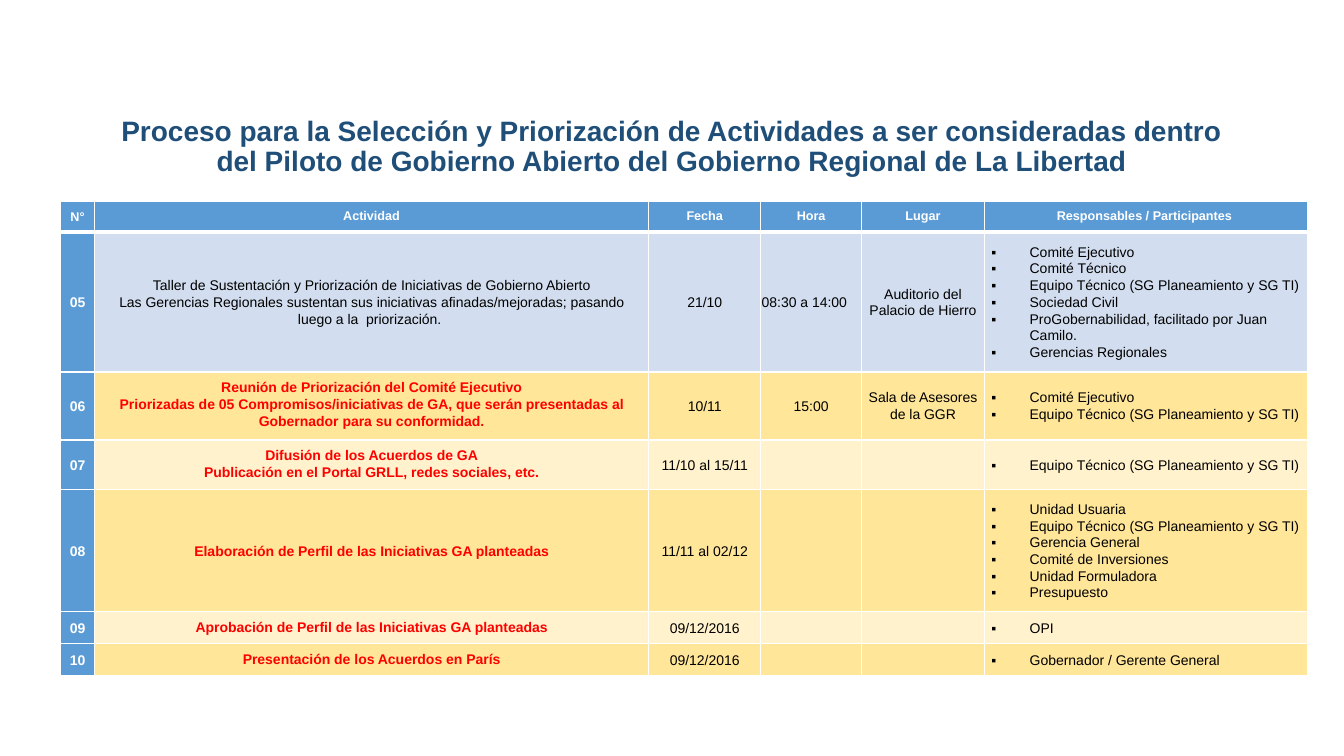
import dataclasses

import lxml.etree
import pptx
import pptx.dml.color
import pptx.enum.text
import pptx.oxml.ns
import pptx.util

Pt = pptx.util.Pt
RGBColor = pptx.dml.color.RGBColor
Align = pptx.enum.text.PP_ALIGN
Anchor = pptx.enum.text.MSO_ANCHOR
qn = pptx.oxml.ns.qn

NAVY = RGBColor(0x1F, 0x4E, 0x79)
BLUE = RGBColor(0x5B, 0x9B, 0xD5)
PALE_BLUE = RGBColor(0xD2, 0xDE, 0xEF)
GOLD = RGBColor(0xFF, 0xE6, 0x99)
CREAM = RGBColor(0xFF, 0xF2, 0xCC)
RED = RGBColor(0xFF, 0x00, 0x00)
BLACK = RGBColor(0x00, 0x00, 0x00)
WHITE = RGBColor(0xFF, 0xFF, 0xFF)

TITLE = ("Proceso para la Selección y Priorización de Actividades a ser consideradas dentro "
         "del Piloto de Gobierno Abierto del Gobierno Regional de La Libertad")
TECHNICAL_TEAM = "Equipo Técnico (SG Planeamiento y SG TI)"
BULLET_INDENT = Pt(27.36)


@dataclasses.dataclass(frozen=True)
class Column:
    heading: str
    width: float
    margin: float = 5


@dataclasses.dataclass(frozen=True)
class Activity:
    number: str
    lines: tuple[str, ...]
    date: str
    participants: tuple[str, ...]
    height: float
    fill: RGBColor
    time: str = ""
    place: str = ""
    highlighted: bool = True
    anchor: Anchor = Anchor.TOP
    time_align: Align = Align.CENTER


COLUMNS = (
    Column("N°", 24),
    Column("Actividad", 396),
    Column("Fecha", 80),
    Column("Hora", 72, margin=0.7),
    Column("Lugar", 87.8, margin=0.7),
    Column("Responsables / Participantes ", 231),
)
HEADER_HEIGHT = 21.8

ACTIVITIES = (
    Activity(
        "05",
        ("Taller de Sustentación y Priorización de Iniciativas de Gobierno Abierto",
         "Las Gerencias Regionales sustentan sus iniciativas afinadas/mejoradas; "
         "pasando luego a la  priorización. "),
        "21/10",
        ("Comité Ejecutivo", "Comité Técnico", TECHNICAL_TEAM, "Sociedad Civil",
         "ProGobernabilidad, facilitado por Juan Camilo.", "Gerencias Regionales"),
        93.8, PALE_BLUE, time="08:30 a 14:00", place="Auditorio del Palacio de Hierro",
        highlighted=False, anchor=Anchor.MIDDLE, time_align=Align.LEFT),
    Activity(
        "06",
        ("Reunión de Priorización del Comité Ejecutivo",
         "Priorizadas de 05 Compromisos/iniciativas de GA, que serán presentadas al "
         "Gobernador para su conformidad."),
        "10/11", ("Comité Ejecutivo", TECHNICAL_TEAM),
        46.6, GOLD, time="15:00", place="Sala de Asesores de la GGR"),
    Activity(
        "07",
        ("Difusión de los Acuerdos de GA",
         "Publicación en el Portal GRLL, redes sociales, etc."),
        "11/10 al 15/11", (TECHNICAL_TEAM,), 34.2, CREAM),
    Activity(
        "08", ("Elaboración de Perfil de las Iniciativas GA planteadas",),
        "11/11 al 02/12",
        ("Unidad Usuaria", TECHNICAL_TEAM, "Gerencia General", "Comité de Inversiones",
         "Unidad Formuladora", "Presupuesto"),
        82.2, GOLD, anchor=Anchor.MIDDLE),
    Activity("09", ("Aprobación de Perfil de las Iniciativas GA planteadas",),
             "09/12/2016", ("OPI",), 22, CREAM),
    Activity("10", ("Presentación de los Acuerdos en París",),
             "09/12/2016", ("Gobernador / Gerente General",), 22, GOLD),
)


def write_text(frame, lines: tuple[str, ...], *, size: float = 10, color: RGBColor = BLACK,
               bold: bool = False, align: Align = Align.CENTER, spacing: float = 1.07,
               bulleted: bool = False) -> None:
    """Write one paragraph per line with a shared format."""
    for index, line in enumerate(lines):
        paragraph = frame.paragraphs[0] if index == 0 else frame.add_paragraph()
        if bulleted:
            properties = paragraph._p.get_or_add_pPr()
            properties.set("marL", str(BULLET_INDENT))
            properties.set("indent", str(-BULLET_INDENT))
            lxml.etree.SubElement(properties, qn("a:buFont"), typeface="Arial")
            lxml.etree.SubElement(properties, qn("a:buChar"), char="▪")
        paragraph.alignment = align
        paragraph.line_spacing = spacing
        if not line:
            lxml.etree.SubElement(paragraph._p, qn("a:endParaRPr"), sz=str(int(size * 100)))
            continue
        run = paragraph.add_run()
        run.text = line
        run.font.name = "Arial"
        run.font.size = Pt(size)
        run.font.bold = bold
        run.font.color.rgb = color


def style_cell(cell, fill: RGBColor, margin: float, *, anchor: Anchor = Anchor.MIDDLE,
               top: float = 1, bottom: float = 1) -> None:
    """Set the margins, white borders and fill of a cell."""
    cell.margin_left = cell.margin_right = Pt(margin)
    cell.margin_top = cell.margin_bottom = Pt(margin)
    cell.vertical_anchor = anchor
    properties = cell._tc.get_or_add_tcPr()
    for side, width in (("L", 1), ("R", 1), ("T", top), ("B", bottom)):
        border = lxml.etree.SubElement(properties, qn(f"a:ln{side}"), w=str(Pt(width)))
        paint = lxml.etree.SubElement(border, qn("a:solidFill"))
        lxml.etree.SubElement(paint, qn("a:srgbClr"), val=str(WHITE))
    cell.fill.solid()
    cell.fill.fore_color.rgb = fill


def draw_title(slide) -> None:
    heading = slide.shapes.add_textbox(Pt(66), Pt(66), Pt(828), Pt(79.2)).text_frame
    heading.word_wrap = True
    heading.vertical_anchor = Anchor.MIDDLE
    write_text(heading, (TITLE,), size=20, color=NAVY, bold=True, spacing=0.9)


def draw_activity(table, row: int, activity: Activity) -> None:
    table.rows[row].height = Pt(activity.height)
    contents = (
        ((activity.number,), {"color": WHITE, "bold": True}),
        (activity.lines, {"color": RED if activity.highlighted else BLACK,
                          "bold": activity.highlighted}),
        ((activity.date,), {}),
        ((activity.time,), {"align": activity.time_align}),
        ((activity.place,), {}),
        (activity.participants, {"align": Align.LEFT, "bulleted": True}),
    )
    for index, (column, (lines, text_format)) in enumerate(zip(COLUMNS, contents)):
        cell = table.cell(row, index)
        style_cell(cell, BLUE if index == 0 else activity.fill, column.margin,
                   anchor=activity.anchor if index == 1 else Anchor.MIDDLE,
                   top=3 if row == 1 else 1)
        write_text(cell.text_frame, lines, **text_format)


def draw_schedule(slide) -> None:
    width = sum(column.width for column in COLUMNS)
    height = HEADER_HEIGHT + sum(activity.height for activity in ACTIVITIES)
    schedule = slide.shapes.add_table(len(ACTIVITIES) + 1, len(COLUMNS), Pt(43.4), Pt(144),
                                      Pt(width), Pt(height)).table
    schedule.horz_banding = False

    # Header row
    schedule.rows[0].height = Pt(HEADER_HEIGHT)
    for index, column in enumerate(COLUMNS):
        schedule.columns[index].width = Pt(column.width)
        cell = schedule.cell(0, index)
        style_cell(cell, BLUE, column.margin, bottom=3)
        write_text(cell.text_frame, (column.heading,), size=9, color=WHITE, bold=True,
                   spacing=1.07 if index == 0 else 0.95)

    # Activity rows
    for row, activity in enumerate(ACTIVITIES, start=1):
        draw_activity(schedule, row, activity)


def main() -> None:
    deck = pptx.Presentation()
    deck.slide_width, deck.slide_height = Pt(960), Pt(540)
    slide = deck.slides.add_slide(deck.slide_layouts[6])
    draw_title(slide)
    draw_schedule(slide)
    deck.save("out.pptx")


if __name__ == "__main__":
    main()
